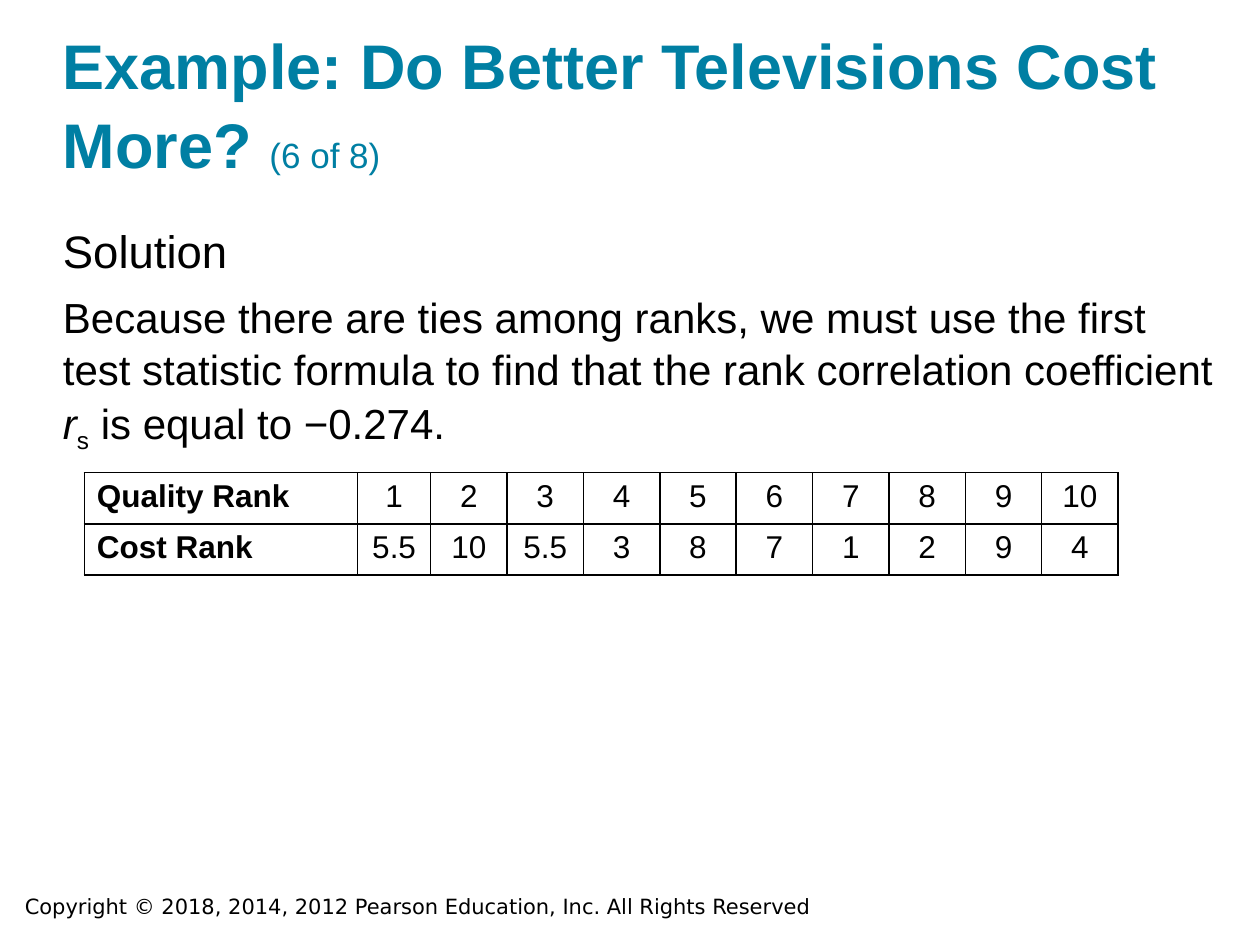
from dataclasses import dataclass

import lxml.etree
import pptx
import pptx.dml.color
import pptx.enum.text
import pptx.oxml
import pptx.oxml.ns
import pptx.util
from pptx.util import Cm, Pt

BLACK = pptx.dml.color.RGBColor(0x00, 0x00, 0x00)
WHITE = pptx.dml.color.RGBColor(0xFF, 0xFF, 0xFF)
TEAL = pptx.dml.color.RGBColor(0x00, 0x7F, 0xA3)
ALIGN = pptx.enum.text.PP_ALIGN
ANCHOR = pptx.enum.text.MSO_ANCHOR


@dataclass(frozen=True)
class Span:
    text: str
    size: float
    bold: bool = False
    italic: bool = False
    baseline: int = 0
    color: pptx.dml.color.RGBColor = BLACK
    font: str = "Arial"


@dataclass(frozen=True)
class TextBlock:
    left: float
    top: float
    width: float
    height: float
    paragraphs: tuple[tuple[Span, ...], ...]
    anchor: ANCHOR = ANCHOR.TOP
    inset: bool = False
    line_spacing: float = 1.05


@dataclass(frozen=True)
class RankRow:
    label: str
    ranks: tuple[str, ...]


BLOCKS = (
    TextBlock(0.25, 17.88, 19.89, 0.76, (
        (Span("Copyright © 2018, 2014, 2012 Pearson Education, Inc. All Rights Reserved",
              12, font="DejaVu Sans"),),
    ), inset=True, line_spacing=1.0),
    TextBlock(1.27, 0.61, 22.86, 3.05, (
        (Span("Example: Do Better Televisions Cost More? ", 36, bold=True, color=TEAL),
         Span("(6 of 8)", 20, color=TEAL)),
    ), anchor=ANCHOR.BOTTOM),
    TextBlock(1.27, 4.45, 23.29, 4.88, (
        (Span("Solution", 26),),
        (Span("Because there are ties among ranks, we must use the first test statistic "
              "formula to find that the rank correlation coefficient ", 24),
         Span("r", 24, italic=True),
         Span("s", 24, baseline=-25000),
         Span(" is equal to −0.274.", 24)),
    )),
)

RANK_ROWS = (
    RankRow("Quality Rank", tuple(str(rank) for rank in range(1, 11))),
    RankRow("Cost Rank", ("5.5", "10", "5.5", "3", "8", "7", "1", "2", "9", "4")),
)
COLUMN_WIDTHS = (5.51, 1.47) + (1.54,) * 9
ROW_HEIGHT = 1.03


def add_span(paragraph, span: Span) -> None:
    run = paragraph.add_run()
    run.text = span.text
    run.font.name = span.font
    run.font.size = Pt(span.size)
    run.font.bold = span.bold
    run.font.italic = span.italic
    run.font.color.rgb = span.color
    if span.baseline:
        run.font._element.set("baseline", str(span.baseline))


def add_text_block(page, block: TextBlock) -> None:
    box = page.shapes.add_textbox(
        Cm(block.left), Cm(block.top), Cm(block.width), Cm(block.height))
    frame = box.text_frame
    frame.word_wrap = True
    frame.vertical_anchor = block.anchor
    if not block.inset:
        frame.margin_left = frame.margin_right = Cm(0)
        frame.margin_top = frame.margin_bottom = Cm(0)
    for index, spans in enumerate(block.paragraphs):
        paragraph = frame.add_paragraph() if index else frame.paragraphs[0]
        paragraph.line_spacing = block.line_spacing
        paragraph.space_before = Pt(6 if index else 0)
        for span in spans:
            add_span(paragraph, span)


def add_borders(cell) -> None:
    properties = cell._tc.get_or_add_tcPr()
    for position, side in enumerate(("lnL", "lnR", "lnT", "lnB")):
        border = pptx.oxml.parse_xml(
            f'<a:{side} {pptx.oxml.ns.nsdecls("a")} w="{Pt(1)}">'
            f'<a:solidFill><a:srgbClr val="{BLACK}"/></a:solidFill></a:{side}>')
        properties.insert(position, border)


def fill_cell(cell, text: str, is_label: bool) -> None:
    cell.fill.solid()
    cell.fill.fore_color.rgb = WHITE
    add_borders(cell)
    paragraph = cell.text_frame.paragraphs[0]
    paragraph.alignment = ALIGN.LEFT if is_label else ALIGN.CENTER
    add_span(paragraph, Span(text, 18, bold=is_label))


def add_rank_table(page, rows: tuple[RankRow, ...]) -> None:
    table = page.shapes.add_table(
        len(rows), len(COLUMN_WIDTHS), Cm(1.7), Cm(9.53),
        Cm(sum(COLUMN_WIDTHS)), Cm(ROW_HEIGHT * len(rows))).table
    table.first_row = table.horz_banding = False
    for column, width in zip(table.columns, COLUMN_WIDTHS):
        column.width = Cm(width)
    for row_index, row in enumerate(rows):
        table.rows[row_index].height = Cm(ROW_HEIGHT)
        for column_index, text in enumerate((row.label, *row.ranks)):
            fill_cell(table.cell(row_index, column_index), text, column_index == 0)


def main() -> None:
    """Build the rank correlation slide and save it."""
    deck = pptx.Presentation()
    deck.slide_width, deck.slide_height = Cm(25.4), Cm(19.05)
    page = deck.slides.add_slide(deck.slide_layouts[6])
    for block in BLOCKS:
        add_text_block(page, block)
    add_rank_table(page, RANK_ROWS)
    deck.save("out.pptx")


if __name__ == "__main__":
    main()
